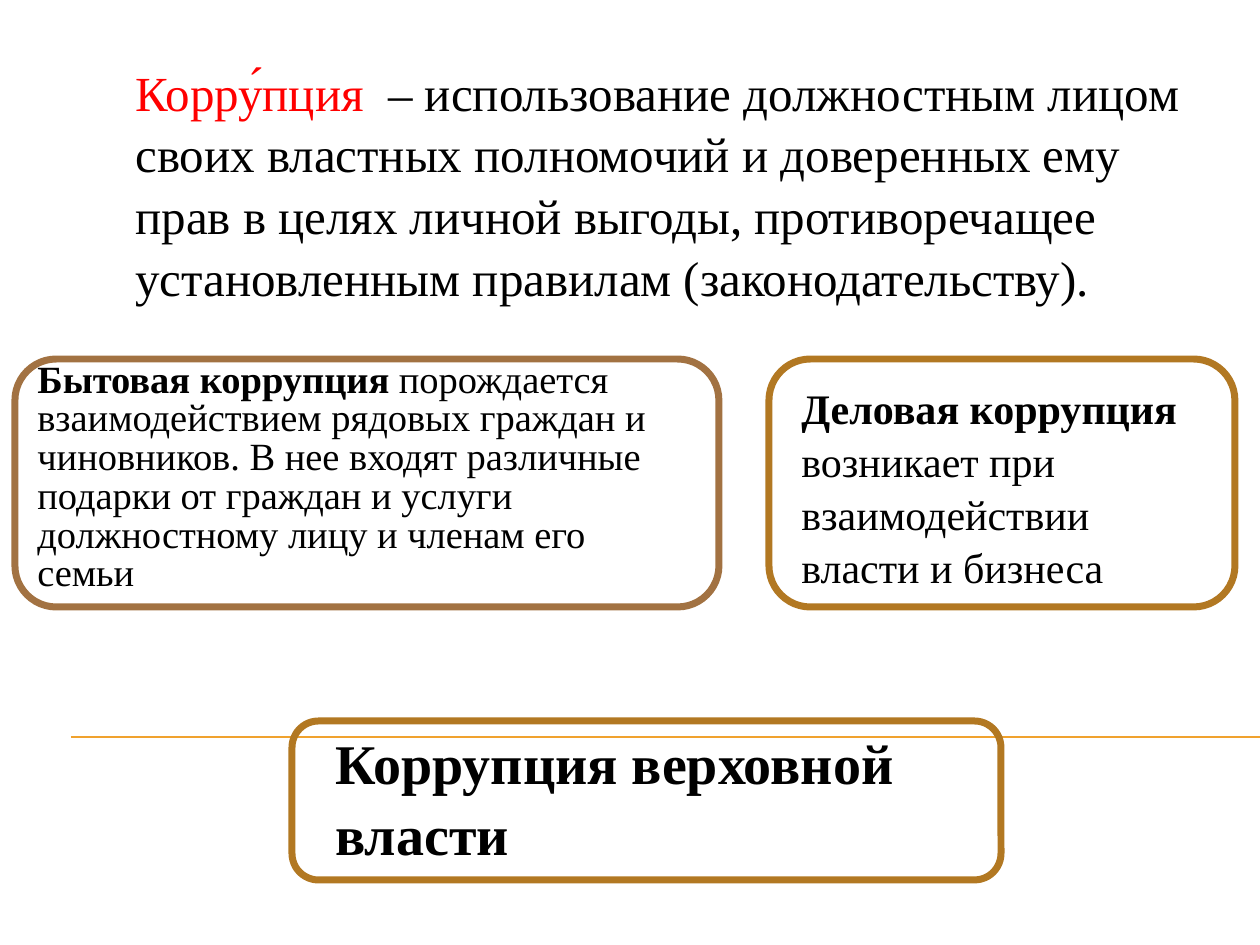
from dataclasses import dataclass

from lxml import etree
from pptx import Presentation
from pptx.dml.color import RGBColor
from pptx.enum.shapes import MSO_CONNECTOR, MSO_SHAPE
from pptx.enum.text import MSO_ANCHOR
from pptx.oxml.ns import qn
from pptx.util import Emu, Pt

ROUND_RECT = MSO_SHAPE.ROUNDED_RECTANGLE
STRAIGHT = MSO_CONNECTOR.STRAIGHT
TOP = MSO_ANCHOR.TOP
BOTTOM = MSO_ANCHOR.BOTTOM
PX_PER_INCH = 126


def px(n):
    return Emu(round(n * 914400 / PX_PER_INCH))


@dataclass(frozen=True)
class Theme:
    font: str = "Times New Roman"
    text: str = "000000"
    accent: str = "FF0000"
    rule: str = "F0A22E"
    household: str = "A27242"
    border: str = "B27822"
    definition_size: int = 28
    household_size: int = 22
    business_size: int = 24
    power_size: int = 32
    rule_width: float = 0.75
    border_width: int = 4
    spacing: float = 1.05
    tight_spacing: float = 0.84


class SlideBuilder:
    def __init__(self, slide, theme):
        self.slide = slide
        self.theme = theme

    def rule(self, x1, y1, x2, y2):
        line = self.slide.shapes.add_connector(STRAIGHT, px(x1), px(y1), px(x2), px(y2))
        line.line.color.rgb = RGBColor.from_string(self.theme.rule)
        line.line.width = Pt(self.theme.rule_width)
        etree.SubElement(line._element.spPr, qn("a:effectLst"))

    def frame(self, x, y, w, h, color):
        sp = self.slide.shapes.add_shape(ROUND_RECT, px(x), px(y), px(w), px(h))
        sp.shadow.inherit = False
        sp.fill.background()
        sp.line.color.rgb = RGBColor.from_string(color)
        sp.line.width = Pt(self.theme.border_width)

    def text(self, x, y, w, h, lead, rest, size, spacing, bold=True, lead_color=None, anchor=TOP):
        tf = self.slide.shapes.add_textbox(px(x), px(y), px(w), px(h)).text_frame
        tf.word_wrap = True
        tf.vertical_anchor = anchor
        p = tf.paragraphs[0]
        p.line_spacing = spacing
        runs = [(lead, bold, lead_color or self.theme.text), (rest, False, self.theme.text)]
        for content, is_bold, color in runs:
            if content:
                r = p.add_run()
                r.text = content
                r.font.name = self.theme.font
                r.font.size = Pt(size)
                r.font.bold = is_bold
                r.font.color.rgb = RGBColor.from_string(color)


def main():
    prs = Presentation()
    prs.slide_width, prs.slide_height = px(1260), px(945)
    theme = Theme()
    s = SlideBuilder(prs.slides.add_slide(prs.slide_layouts[6]), theme)

    s.rule(71, 737, 1260, 737)
    s.text(25, 359, 675, 242, "Бытовая коррупция",
           " порождается взаимодействием рядовых граждан и чиновников. "
           "В нее входят различные подарки от граждан и услуги "
           "должностному лицу и членам его семьи",
           theme.household_size, theme.tight_spacing, anchor=BOTTOM)
    s.text(123, 53, 1071, 251, "Корру́пция",
           "  – использование должностным лицом своих властных полномочий "
           "и доверенных ему прав в целях личной выгоды, противоречащее "
           "установленным правилам (законодательству).",
           theme.definition_size, theme.spacing, bold=False, lead_color=theme.accent)
    s.frame(15, 359, 704, 248, theme.household)
    s.frame(769, 359, 466, 248, theme.border)
    s.text(789, 374, 427, 217, "Деловая коррупция",
           " возникает при взаимодействии власти и бизнеса",
           theme.business_size, theme.spacing)
    s.frame(292, 721, 709, 159, theme.border)
    s.text(323, 719, 679, 149, "Коррупция верховной власти", "",
           theme.power_size, theme.spacing)

    prs.save("out.pptx")


if __name__ == "__main__":
    main()
